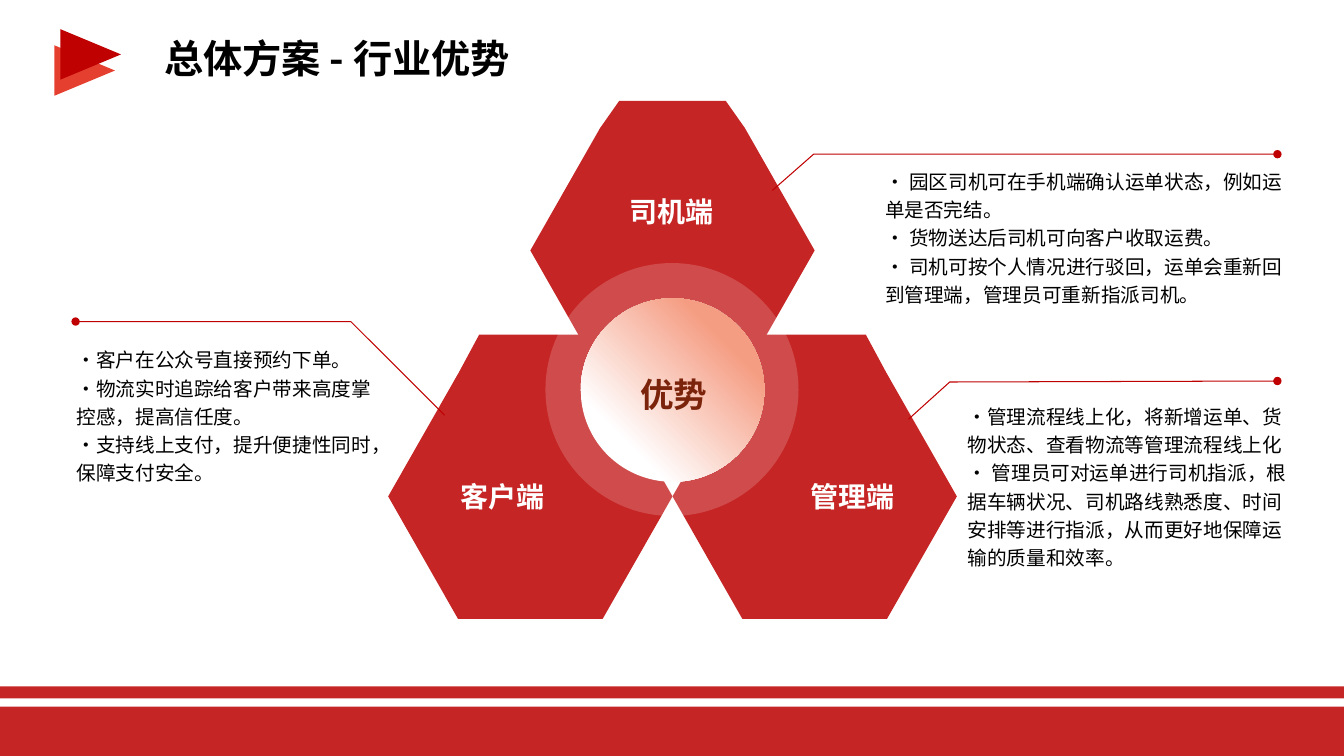
from dataclasses import dataclass

from lxml import etree
from pptx import Presentation
from pptx.dml.color import RGBColor
from pptx.enum.shapes import MSO_SHAPE
from pptx.enum.text import PP_ALIGN
from pptx.oxml.ns import qn
from pptx.shapes.autoshape import Shape
from pptx.slide import Slide
from pptx.util import Inches, Pt

HEXAGON, ELLIPSE = MSO_SHAPE.HEXAGON, MSO_SHAPE.OVAL
RECTANGLE, TRIANGLE = MSO_SHAPE.RECTANGLE, MSO_SHAPE.ISOSCELES_TRIANGLE
LEFT, CENTER = PP_ALIGN.LEFT, PP_ALIGN.CENTER

Point = tuple[float, float]
Bounds = tuple[float, float, float, float]


@dataclass(frozen=True)
class Theme:
    font: str = "Noto Sans CJK SC"
    red: str = "C62525"
    dark_red: str = "BF0101"
    light_red: str = "E5402F"
    peach: str = "F59D83"
    brown: str = "7B240B"
    white: str = "FFFFFF"
    black: str = "000000"
    title_size: int = 28
    center_size: int = 24
    label_size: int = 20
    body_size: int = 14


@dataclass(frozen=True)
class Petal:
    left: float
    top: float
    cap_height: float
    cap_inset: float


@dataclass(frozen=True)
class Caption:
    bounds: Bounds
    lines: tuple[str, ...]
    size: int
    color: str
    bold: bool = True
    alignment: PP_ALIGN = CENTER
    line_spacing: float = 1.2


THEME = Theme()
PETAL_WIDTH, PETAL_HEIGHT, PETAL_CORNER = 2.82, 2.43, 0.285

PETALS = (
    Petal(5.26, 1.27, 0.27, 0.19),
    Petal(3.85, 3.71, 0.39, 0.21),
    Petal(6.67, 3.71, 0.39, 0.21),
)

LEADERS: tuple[tuple[Point, ...], ...] = (
    ((7.66, 1.89), (8.07, 1.53), (12.67, 1.53)),
    ((9.01, 4.16), (9.42, 3.79), (12.67, 3.78)),
    ((4.41, 4.12), (3.48, 3.19), (0.75, 3.19)),
)


def body(bounds: Bounds, *lines: str) -> Caption:
    return Caption(bounds, lines, THEME.body_size, THEME.black, False, LEFT)


def label(bounds: Bounds, text: str) -> Caption:
    return Caption(bounds, (text,), THEME.label_size, THEME.white)


CAPTIONS = (
    Caption((1.53, 0.29, 8.74, 0.57), ("总体方案 - 行业优势",), THEME.title_size,
            THEME.black, alignment=LEFT, line_spacing=1.0),
    Caption((5.57, 3.58, 2.23, 0.58), ("优势",), THEME.center_size, THEME.brown),
    label((5.52, 1.81, 2.28, 0.5), "司机端"),
    label((3.99, 4.64, 1.99, 1.19), "客户端"),
    label((7.66, 4.64, 1.59, 0.5), "管理端"),
    body((8.68, 1.59, 4.18, 1.51),
         "• 园区司机可在手机端确认运单状态，例如运单是否完结。",
         "• 货物送达后司机可向客户收取运费。",
         "• 司机可按个人情况进行驳回，运单会重新回到管理端，管理员可重新指派司机。"),
    body((0.66, 3.36, 3.18, 1.51),
         "•客户在公众号直接预约下单。",
         "•物流实时追踪给客户带来高度掌控感，提高信任度。",
         "•支持线上支付，提升便捷性同时，保障支付安全。"),
    body((9.5, 3.92, 3.4, 1.8),
         "•管理流程线上化，将新增运单、货物状态、查看物流等管理流程线上化",
         "• 管理员可对运单进行司机指派，根据车辆状况、司机路线熟悉度、时间安排等进行指派，从而更好地保障运输的质量和效率。"),
)


def paint(shape: Shape, color: str) -> None:
    shape.shadow.inherit = False
    shape.fill.solid()
    shape.fill.fore_color.rgb = RGBColor.from_string(color)
    shape.line.fill.background()


def add_preset(page: Slide, preset: MSO_SHAPE, bounds: Bounds, color: str) -> Shape:
    shape = page.shapes.add_shape(preset, *map(Inches, bounds))
    paint(shape, color)
    return shape


def add_outline(page: Slide, points: tuple[Point, ...], close: bool) -> Shape:
    start, *rest = [(Inches(x), Inches(y)) for x, y in points]
    builder = page.shapes.build_freeform(*start)
    builder.add_line_segments(rest, close=close)
    return builder.convert_to_shape()


def add_petal(page: Slide, petal: Petal) -> None:
    bounds = (petal.left, petal.top, PETAL_WIDTH, PETAL_HEIGHT)
    hexagon = add_preset(page, HEXAGON, bounds, THEME.red)
    hexagon.adjustments[0] = PETAL_CORNER
    corner = PETAL_CORNER * PETAL_HEIGHT
    left, right = petal.left + corner, petal.left + PETAL_WIDTH - corner
    top = petal.top - petal.cap_height
    cap = add_outline(page, (
        (left, petal.top), (left + petal.cap_inset, top),
        (right - petal.cap_inset, top), (right, petal.top),
    ), close=True)
    paint(cap, THEME.red)


def add_center(page: Slide) -> None:
    halo = add_preset(page, ELLIPSE, (5.41, 2.61, 2.51, 2.51), THEME.white)
    halo_color = halo.fill._xPr.find(qn("a:solidFill"))[0]
    etree.SubElement(halo_color, qn("a:alpha"), val="18000")
    disc = add_preset(page, ELLIPSE, (5.76, 2.96, 1.82, 1.82), THEME.white)
    disc.fill.gradient()
    disc.fill.gradient_angle = 45
    stops = ((0.23, THEME.white), (0.78, THEME.peach))
    for stop, (position, color) in zip(disc.fill.gradient_stops, stops):
        stop.position = position
        stop.color.rgb = RGBColor.from_string(color)


def add_leader(page: Slide, points: tuple[Point, ...]) -> None:
    leader = add_outline(page, points, close=False)
    leader.shadow.inherit = False
    leader.fill.background()
    leader.line.color.rgb = RGBColor.from_string(THEME.dark_red)
    leader.line.width = Pt(0.75)
    etree.SubElement(leader.line._get_or_add_ln(), qn("a:tailEnd"), type="oval")


def add_caption(page: Slide, caption: Caption) -> None:
    box = page.shapes.add_textbox(*map(Inches, caption.bounds))
    frame = box.text_frame
    frame.word_wrap = True
    para_format = {"alignment": caption.alignment, "line_spacing": caption.line_spacing}
    font_format = {"name": THEME.font, "size": Pt(caption.size), "bold": caption.bold}
    for index, line in enumerate(caption.lines):
        para = frame.add_paragraph() if index else frame.paragraphs[0]
        for name, value in para_format.items():
            setattr(para, name, value)
        span = para.add_run()
        span.text = line
        for name, value in font_format.items():
            setattr(span.font, name, value)
        span.font.color.rgb = RGBColor.from_string(caption.color)
        etree.SubElement(span.font._element, qn("a:ea"), typeface=THEME.font) if hasattr(
            span.font, "_element") else etree.SubElement(
            span._r.get_or_add_rPr(), qn("a:ea"), typeface=THEME.font)


def main() -> None:
    deck = Presentation()
    deck.slide_width, deck.slide_height = Inches(13.33), Inches(7.5)
    page = deck.slides.add_slide(deck.slide_layouts[6])
    for petal in PETALS:
        add_petal(page, petal)
    add_center(page)
    for points in LEADERS:
        add_leader(page, points)
    for top, height in ((7.01, 0.49), (6.81, 0.12)):
        add_preset(page, RECTANGLE, (0, top, 13.33, height), THEME.red)
    for left, top, color in ((0.59, 0.4, THEME.light_red), (0.65, 0.24, THEME.dark_red)):
        add_preset(page, TRIANGLE, (left, top, 0.5, 0.6), color).rotation = 90
    for caption in CAPTIONS:
        add_caption(page, caption)
    deck.save("out.pptx")


if __name__ == "__main__":
    main()
